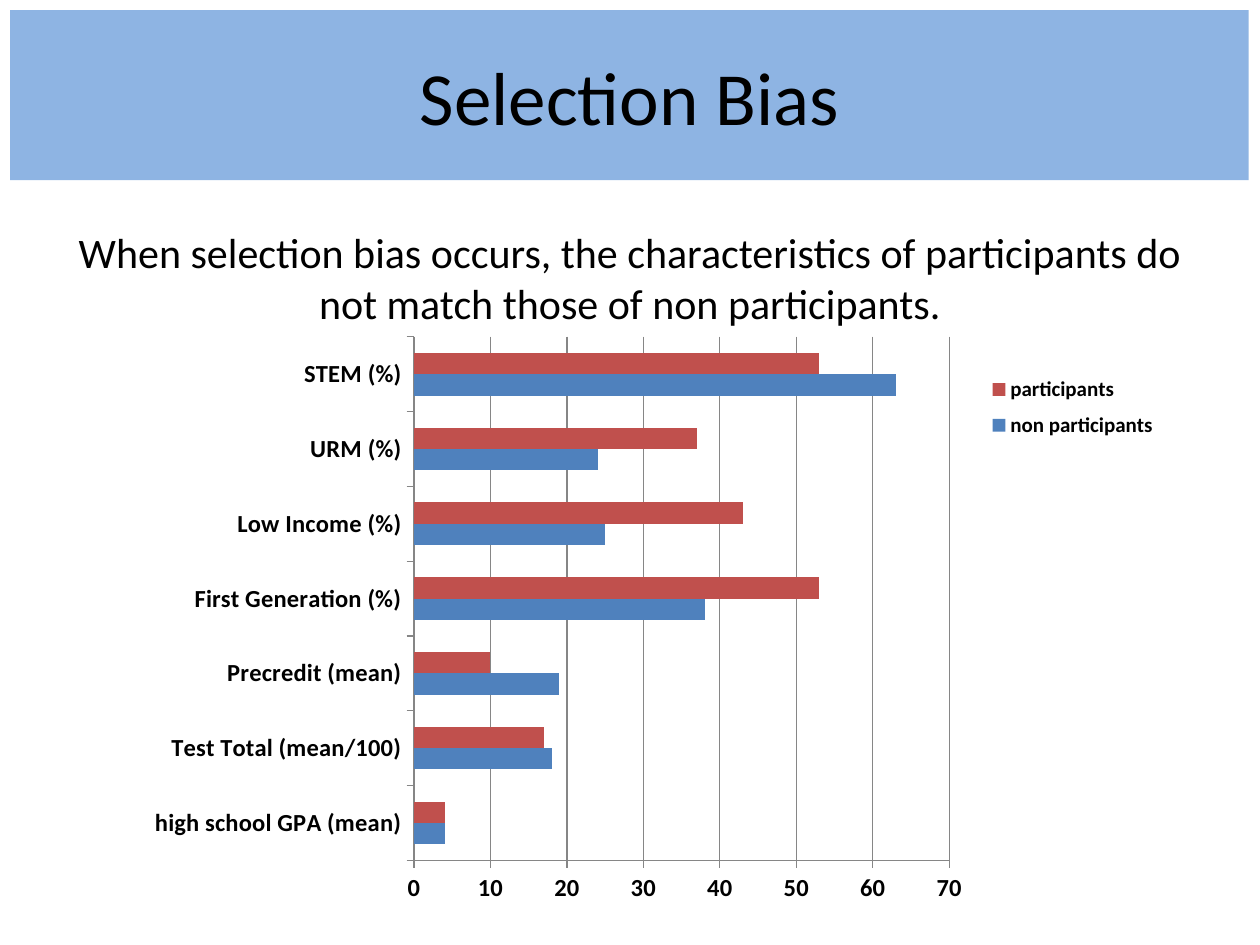
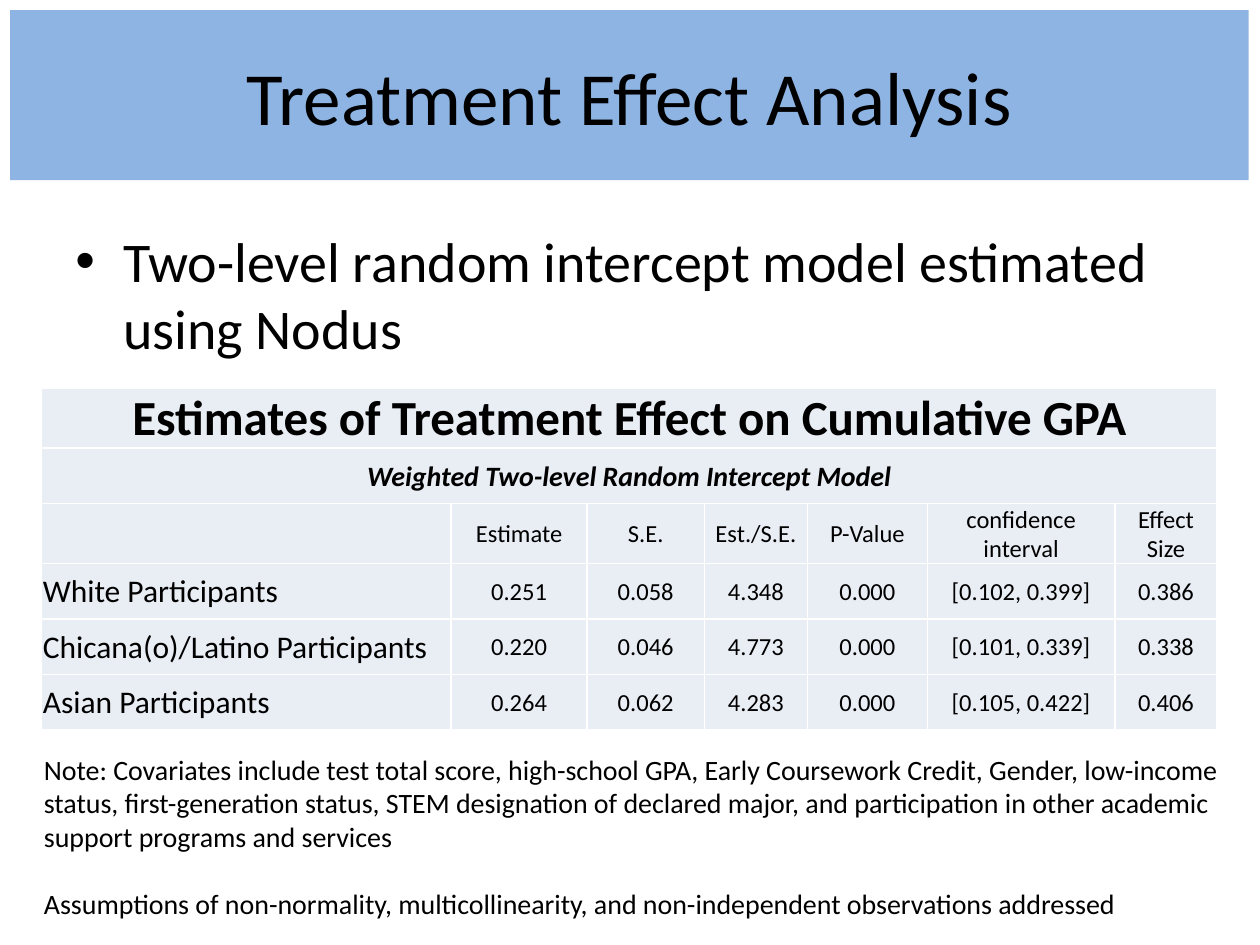
from lxml import etree
from pptx import Presentation
from pptx.chart.data import CategoryChartData as ChartData
from pptx.dml.color import RGBColor as RGB
from pptx.enum.chart import XL_CHART_TYPE as Kind, XL_LEGEND_POSITION as Place
from pptx.enum.chart import XL_TICK_MARK as Tick
from pptx.enum.text import MSO_ANCHOR as Anchor, PP_ALIGN as Align
from pptx.oxml.ns import qn
from pptx.util import Inches, Pt

# Content
BIAS = ("When selection bias occurs, the characteristics of participants do "
        "not match those of non participants.")
CATS = ["high school GPA (mean)", "Test Total (mean/100)", "Precredit (mean)",
        "First Generation (%)", "Low Income (%)", "URM (%)", "STEM (%)"]
MODEL = "Two-level random intercept model estimated using Nodus"
HEADS = ["Estimates of Treatment Effect on Cumulative GPA",
         "Weighted Two-level Random Intercept Model"]
ROWS = [
    ["", "Estimate", "S.E.", "Est./S.E.", "P-Value", "confidence interval", "Effect Size"],
    ["White Participants", "0.251", "0.058", "4.348", "0.000", "[0.102, 0.399]", "0.386"],
    ["Chicana(o)/Latino Participants", "0.220", "0.046", "4.773", "0.000",
     "[0.101, 0.339]", "0.338"],
    ["Asian Participants", "0.264", "0.062", "4.283", "0.000", "[0.105, 0.422]", "0.406"],
]
WIDTHS = [3.25, 1.08, 0.93, 0.82, 0.95, 1.49, 0.81]
NOTES = [
    "Note: Covariates include test total score, high-school GPA, Early Coursework "
    "Credit, Gender, low-income status, first-generation status, STEM designation of "
    "declared major, and participation in other academic support programs and services",
    "Assumptions of non-normality, multicollinearity, and non-independent "
    "observations addressed",
]

# Shared style
FONT = "Calibri"
BLACK = RGB(0x00, 0x00, 0x00)
BAND = RGB(0x8E, 0xB4, 0xE3)
PALE = RGB(0xE9, 0xED, 0xF4)
GRAY = RGB(0x86, 0x86, 0x86)
BLUE = RGB(0x4F, 0x81, 0xBD)
RED = RGB(0xC0, 0x50, 0x4D)
SERIES = [("non participants", [4, 18, 19, 38, 25, 24, 63], BLUE),
          ("participants", [4, 17, 10, 53, 43, 37, 53], RED)]


def style(font, size, bold=False, slant=False):
    font.name, font.size, font.bold, font.italic = FONT, Pt(size), bold, slant
    font.color.rgb = BLACK


def write(para, text, size, align=Align.LEFT, **look):
    para.text, para.alignment = text, align
    style(para.font, size, **look)


def add_page(deck, title):
    page = deck.slides.add_slide(deck.slide_layouts[5])
    band = page.shapes.title
    band.left, band.top, band.width, band.height = map(Inches, (0.08, 0.08, 9.83, 1.35))
    band.fill.solid()
    band.fill.fore_color.rgb = BAND
    band.text_frame.vertical_anchor = Anchor.MIDDLE
    write(band.text_frame.paragraphs[0], title, 42.9, Align.CENTER)
    return page


def add_text(page, box, texts, size, align=Align.LEFT, gap=0):
    frame = page.shapes.add_textbox(*map(Inches, box)).text_frame
    frame.word_wrap = True
    for i, text in enumerate(texts):
        para = frame.add_paragraph() if i else frame.paragraphs[0]
        write(para, text, size, align)
        if i:
            para.space_before = Pt(gap)
    return frame


def set_bullet(para, indent):
    props = para._p.get_or_add_pPr()
    props.set("marL", str(Inches(indent)))
    props.set("indent", str(-Inches(indent)))
    etree.SubElement(props, qn("a:buFont")).set("typeface", "Arial")
    etree.SubElement(props, qn("a:buChar")).set("char", "•")


def set_layout(part, after, inner=False, **spots):
    """Place a chart part by fractions of the chart's size."""
    for old in part.findall(qn("c:layout")):
        part.remove(old)
    layout = etree.Element(qn("c:layout"))
    manual = etree.SubElement(layout, qn("c:manualLayout"))
    modes = {"layoutTarget": "inner"} if inner else {}
    modes.update(xMode="edge", yMode="edge", **spots)
    for tag, val in modes.items():
        etree.SubElement(manual, qn("c:" + tag)).set("val", str(val))
    if after is None:
        part.insert(0, layout)
    else:
        after.addnext(layout)


def add_bars(page):
    data = ChartData()
    data.categories = CATS
    for name, vals, _ in SERIES:
        data.add_series(name, vals)
    box = map(Inches, (1.08, 2.58, 8.17, 4.67))
    chart = page.shapes.add_chart(Kind.BAR_CLUSTERED, *box, data).chart
    style(chart.font, 10)
    chart.has_title = False
    plot = chart.plots[0]
    plot.gap_width, plot.vary_by_categories = 150, False
    for bar, (_, _, color) in zip(plot.series, SERIES):
        bar.format.fill.solid()
        bar.format.fill.fore_color.rgb = color

    # Axes and grid
    val = chart.value_axis
    val.minimum_scale, val.maximum_scale, val.major_unit = 0, 70, 10
    val.has_major_gridlines = True
    for axis in (chart.category_axis, val):
        axis.major_tick_mark = Tick.OUTSIDE
        style(axis.tick_labels.font, 14, bold=True)
    for part in (chart.category_axis, val, val.major_gridlines):
        part.format.line.color.rgb = GRAY
        part.format.line.width = Pt(0.75)

    # Legend and placement
    chart.has_legend = True
    legend = chart.legend
    legend.position, legend.include_in_layout = Place.RIGHT, False
    style(legend.font, 12, bold=True)
    set_layout(legend._element, legend._element.find(qn("c:legendPos")),
               x=0.82, y=0.07, w=0.18, h=0.14)
    area = chart._chartSpace.find(".//" + qn("c:plotArea"))
    set_layout(area, None, inner=True, x=0.27, y=0.02, w=0.52, h=0.89)


def fill_cell(cell, text, size, align=Align.CENTER, **look):
    cell.fill.solid()
    cell.fill.fore_color.rgb = PALE
    cell.vertical_anchor = Anchor.MIDDLE
    cell.margin_left = cell.margin_right = cell.margin_top = Inches(0.01)
    cell.margin_bottom = 0
    write(cell.text_frame.paragraphs[0], text, size, align, **look)


def add_grid(page):
    count = len(HEADS) + len(ROWS)
    box = map(Inches, (0.33, 3.08, 9.33, 2.62))
    table = page.shapes.add_table(count, len(WIDTHS), *box).table
    table.first_row = table.horz_banding = False
    for col, width in zip(table.columns, WIDTHS):
        col.width = Inches(width)
    for i, row in enumerate(table.rows):
        row.height = Inches(0.44 if i else 0.42)

    # Two heading rows across the full width
    looks = [(28, False), (16, True)]
    for i, (text, (size, slant)) in enumerate(zip(HEADS, looks)):
        table.cell(i, 0).merge(table.cell(i, len(WIDTHS) - 1))
        fill_cell(table.cell(i, 0), text, size, bold=True, slant=slant)

    # Column names and estimates
    for i, row in enumerate(ROWS, len(HEADS)):
        for j, text in enumerate(row):
            size, align = (14, Align.CENTER) if j else (18, Align.LEFT)
            fill_cell(table.cell(i, j), text, size, align)


def main():
    deck = Presentation()
    deck.slide_width, deck.slide_height = Inches(10), Inches(7.5)
    body = (0.5, 1.75, 9, 1.2)

    # Selection bias
    page = add_page(deck, "Selection Bias")
    add_text(page, body, [BIAS], 24, Align.CENTER)
    add_bars(page)

    # Treatment effect
    page = add_page(deck, "Treatment Effect Analysis")
    frame = add_text(page, body, [MODEL], 32)
    set_bullet(frame.paragraphs[0], 0.38)
    add_grid(page)
    add_text(page, (0.25, 5.92, 9.58, 1.45), NOTES, 16, gap=19.5)

    deck.save("out.pptx")


if __name__ == "__main__":
    main()
